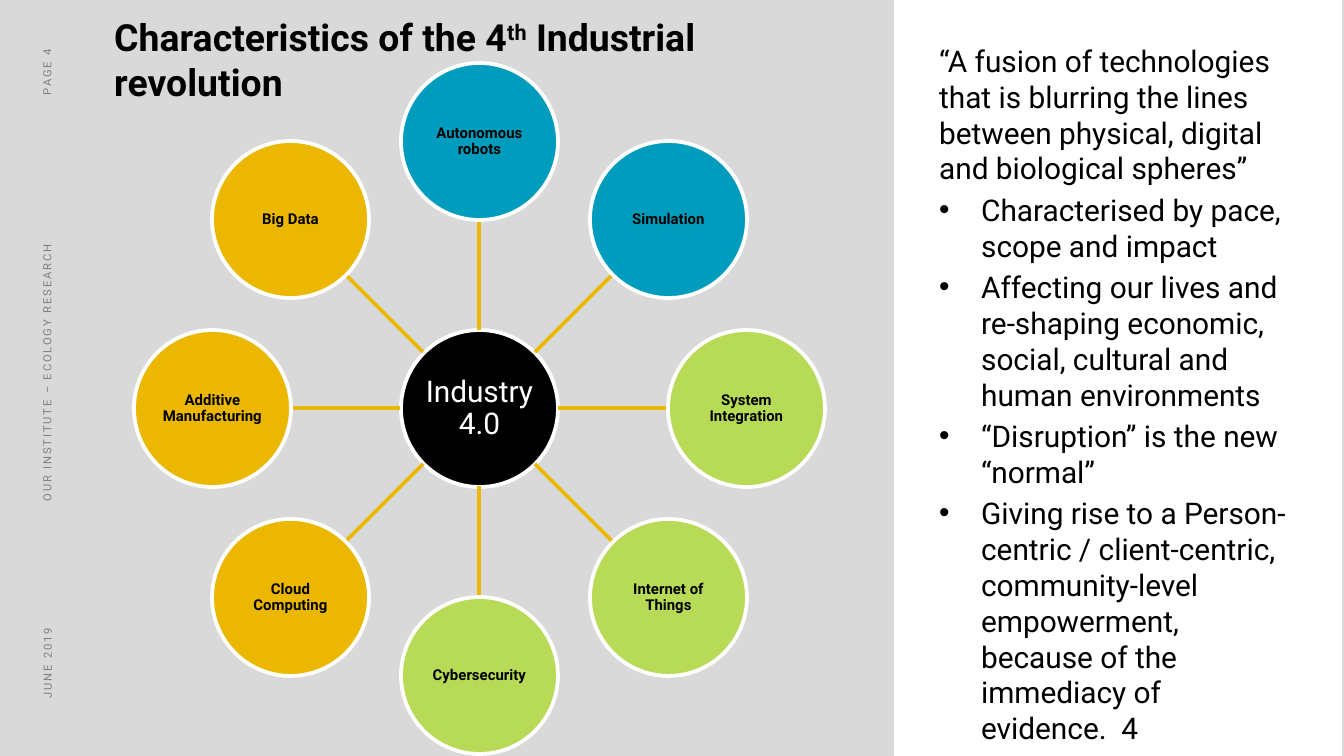
"""Build the Industry 4.0 slide: a radial diagram beside a text panel."""
import math

from lxml import etree
from pptx import Presentation
from pptx import util as u
from pptx.dml.color import RGBColor
from pptx.enum import shapes, text
from pptx.oxml.ns import qn

SCALE = 914400 / 134.4
COLORS = {
    "background": "D9D9D9", "white": "FFFFFF", "black": "000000", "gray": "808080",
    "gold": "EBB700", "blue": "009CBD", "green": "B7DB57",
}
ALIGN = text.PP_ALIGN
MIDDLE = text.MSO_ANCHOR.MIDDLE


def px(n):
    return u.Emu(round(n * SCALE))


def rgb(name):
    return RGBColor.from_string(COLORS[name])


def write(p, content, size=16, color="black", bold=False, track=0, raised=0,
          align=ALIGN.LEFT, leading=None, before=0, bullet=None):
    p.alignment = align
    if leading:
        p.line_spacing = leading
    if before:
        p.space_before = u.Pt(before)
    if bullet:
        pPr = p._p.get_or_add_pPr()
        pPr.set("marL", str(px(42)))
        pPr.set("indent", str(-px(42)))
        etree.SubElement(pPr, qn("a:buFont")).set("typeface", "Arial")
        etree.SubElement(pPr, qn("a:buChar")).set("char", bullet)
    r = p.add_run()
    r.text = content
    r.font.name = "Roboto"
    r.font.size = u.Pt(size)
    r.font.bold = bold
    r.font.color.rgb = rgb(color)
    rPr = r._r.get_or_add_rPr()
    if track:
        rPr.set("spc", str(track * 100))
    if raised:
        rPr.set("baseline", str(raised * 1000))


class Canvas:
    def __init__(self, s):
        self.s = s
        s.background.fill.solid()
        s.background.fill.fore_color.rgb = rgb("background")

    def panel(self, x, y, w, h, fill, kind=shapes.MSO_SHAPE.RECTANGLE):
        sp = self.s.shapes.add_shape(kind, px(x), px(y), px(w), px(h))
        sp.shadow.inherit = False
        sp.fill.solid()
        sp.fill.fore_color.rgb = rgb(fill)
        sp.line.fill.background()
        return sp

    def circle(self, cx, cy, d, fill, label, **fmt):
        sp = self.panel(cx - d // 2, cy - d // 2, d, d, fill, shapes.MSO_SHAPE.OVAL)
        sp.line.color.rgb = rgb("white")
        sp.line.width = u.Pt(2)
        tf = sp.text_frame
        tf.word_wrap = True
        tf.vertical_anchor = MIDDLE
        tf.margin_left = tf.margin_right = tf.margin_top = tf.margin_bottom = px(1)
        write(tf.paragraphs[0], label, align=ALIGN.CENTER, leading=0.9, **fmt)

    def spoke(self, x1, y1, x2, y2):
        c = self.s.shapes.add_connector(
            shapes.MSO_CONNECTOR.STRAIGHT, px(x1), px(y1), px(x2), px(y2))
        c.line.color.rgb = rgb("gold")
        c.line.width = u.Pt(2)
        etree.SubElement(c._element.spPr, qn("a:effectLst"))

    def box(self, x, y, w, h):
        sp = self.s.shapes.add_textbox(px(x), px(y), px(w), px(h))
        sp.text_frame.word_wrap = True
        return sp

    def side_label(self, cy, length, content, align):
        sp = self.box(47 - length // 2, cy - 20, length, 40)
        sp.rotation = 270
        sp.text_frame.vertical_anchor = MIDDLE
        write(sp.text_frame.paragraphs[0], content, size=6, color="gray", track=1, align=align)


def draw_wheel(canvas):
    cx, cy, orbit, d = 479, 408, 267, 157
    nodes = [
        ("Autonomous robots", "blue"), ("Simulation", "blue"),
        ("System Integration", "green"), ("Internet of Things", "green"),
        ("Cybersecurity", "green"), ("Cloud Computing", "gold"),
        ("Additive Manufacturing", "gold"), ("Big Data", "gold"),
    ]
    canvas.circle(cx, cy, d, "black", "Industry 4.0", color="white")
    for i, (label, fill) in enumerate(nodes):
        angle = math.tau * i / len(nodes)
        (x1, y1), (x2, y2), (x, y) = [
            (round(cx + r * math.sin(angle)), round(cy - r * math.cos(angle)))
            for r in (d / 2, orbit - d / 2, orbit)]
        canvas.spoke(x1, y1, x2, y2)
        canvas.circle(x, y, d, fill, label, size=8, bold=True)


def main():
    prs = Presentation()
    prs.slide_width, prs.slide_height = px(1344), px(756)
    canvas = Canvas(prs.slides.add_slide(prs.slide_layouts[6]))
    canvas.panel(894, 0, 448, 756, "white")

    tf = canvas.box(926, 36, 380, 680).text_frame
    write(tf.paragraphs[0], "“A fusion of technologies that is blurring the lines "
          "between physical, digital and biological spheres”")
    for point in (
        "Characterised by pace, scope and impact",
        "Affecting our lives and re-shaping economic, social, cultural and human environments",
        "“Disruption” is the new “normal”",
        "Giving rise to a Person-centric / client-centric, community-level empowerment, "
        "because of the immediacy of evidence.  4",
    ):
        write(tf.add_paragraph(), point, before=3, bullet="•")

    canvas.side_label(649, 125, "JUNE 2019", ALIGN.LEFT)
    canvas.side_label(373, 414, "OUR INSTITUTE – ECOLOGY RESEARCH", ALIGN.CENTER)
    canvas.side_label(99, 126, "PAGE 4", ALIGN.RIGHT)
    draw_wheel(canvas)

    p = canvas.box(101, 8, 773, 95).text_frame.paragraphs[0]
    for content, raised in (
            ("Characteristics of the 4", 0), ("th", 30), (" Industrial revolution", 0)):
        write(p, content, size=20, bold=True, raised=raised)
    prs.save("out.pptx")


if __name__ == "__main__":
    main()
